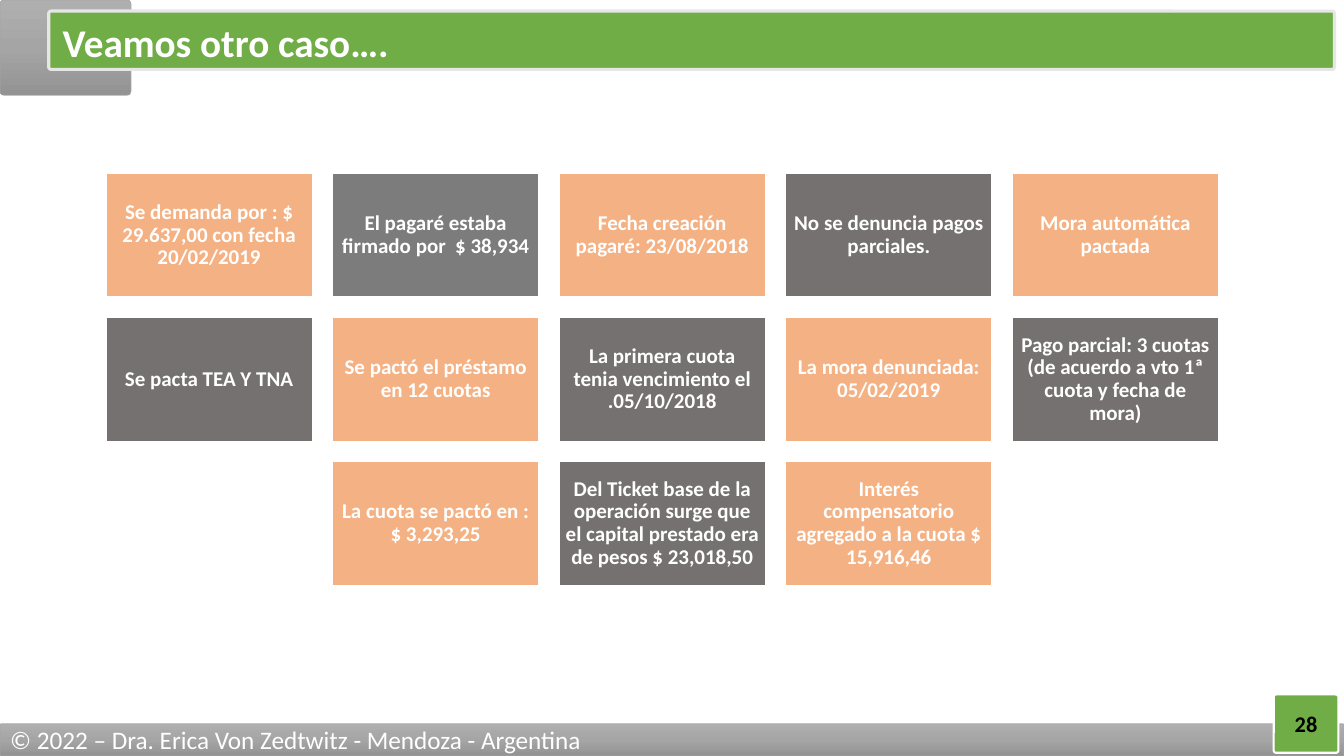
"""Build the slide of facts of a promissory note case, as a grid of tiles."""
from copy import deepcopy

from pptx import Presentation
from pptx.dml.color import RGBColor
from pptx.enum.shapes import MSO_SHAPE as Shape
from pptx.enum.text import MSO_ANCHOR as Anchor, PP_ALIGN as Align
from pptx.util import Cm, Pt

COLORS = {
    "white": "FFFFFF", "black": "000000", "green": "70AD47", "pale": "E7E6E6",
    "silver": "A5A5A5", "silver_top": "AFAFAF", "silver_bottom": "939393",
    "orange": "F4B183", "gray": "767171", "neutral": "7C7C7C",
}
RGB = {name: RGBColor.from_string(code) for name, code in COLORS.items()}


def add_box(kind, left, top, width, height, fill, line, line_width):
    box = slide.shapes.add_shape(kind, Cm(left), Cm(top), Cm(width), Cm(height))
    box.shadow.inherit = False
    if kind == Shape.ROUNDED_RECTANGLE:
        box.adjustments[0] = 0.04
    if fill == "gradient":
        box.fill.gradient()
        box.fill.gradient_angle = 270
        stop_list = box._element.xpath(".//a:gsLst")[0]
        stop_list.insert(1, deepcopy(stop_list[0]))
        shades = ("silver_top", "silver", "silver_bottom")
        for stop, shade, position in zip(box.fill.gradient_stops, shades, (0, 0.5, 1)):
            stop.color.rgb = RGB[shade]
            stop.position = position
    else:
        box.fill.solid()
        box.fill.fore_color.rgb = RGB[fill]
    box.line.color.rgb = RGB[line]
    box.line.width = Pt(line_width)
    return box


def write(box, text, size, color, align, bold=True, spacing=1.0):
    frame = box.text_frame
    frame.word_wrap = True
    frame.vertical_anchor = Anchor.MIDDLE
    paragraph = frame.paragraphs[0]
    paragraph.text = text
    paragraph.alignment = align
    paragraph.line_spacing = spacing
    paragraph.font.name = "Calibri"
    paragraph.font.size = Pt(size)
    paragraph.font.bold = bold
    paragraph.font.color.rgb = RGB[color]


prs = Presentation()
prs.slide_width, prs.slide_height = Cm(33.87), Cm(19.05)
slide = prs.slides.add_slide(prs.slide_layouts[6])

ROUNDED = Shape.ROUNDED_RECTANGLE
add_box(ROUNDED, 0, 0, 3.3, 2.4, "gradient", "silver", 0.5)
add_box(ROUNDED, 1.23, 0.28, 32.4, 1.47, "green", "pale", 2.25)
footer = add_box(ROUNDED, 0, 18.24, 33.87, 0.81, "gradient", "silver", 0.5)
write(footer, "© 2022 – Dra. Erica Von Zedtwitz - Mendoza - Argentina", 18, "white",
      Align.LEFT, bold=False)
page_number = add_box(ROUNDED, 32.1, 17.5, 1.63, 1.47, "green", "white", 1.5)
write(page_number, "28", 16, "black", Align.CENTER)

FACTS = [
    "Se demanda por : $ 29.637,00 con fecha 20/02/2019",
    "El pagaré estaba firmado por  $ 38,934",
    "Fecha creación pagaré: 23/08/2018",
    "No se denuncia pagos parciales.",
    "Mora automática pactada",
    "Se pacta TEA Y TNA",
    "Se pactó el préstamo en 12 cuotas",
    "La primera cuota tenia vencimiento el .05/10/2018",
    "La mora denunciada: 05/02/2019",
    "Pago parcial: 3 cuotas (de acuerdo a vto 1ª cuota y fecha de mora)",
    "La cuota se pactó en : $ 3,293,25",
    "Del Ticket base de la operación surge que el capital prestado era de pesos $ 23,018,50",
    "Interés compensatorio agregado a la cuota $ 15,916,46",
]
COLUMNS = 5
GRID_LEFT, GRID_TOP = 2.67, 4.37
TILE_WIDTH, TILE_HEIGHT, GAP = 5.2, 3.12, 0.51

for index, fact in enumerate(FACTS):
    row, column = divmod(index, COLUMNS)
    tiles_in_row = min(COLUMNS, len(FACTS) - row * COLUMNS)
    column += (COLUMNS - tiles_in_row) / 2
    fill = "neutral" if index == 1 else ("orange", "gray")[index % 2]
    tile = add_box(Shape.RECTANGLE, GRID_LEFT + column * (TILE_WIDTH + GAP),
                   GRID_TOP + row * (TILE_HEIGHT + GAP), TILE_WIDTH, TILE_HEIGHT,
                   fill, "white", 1)
    frame = tile.text_frame
    frame.margin_left = frame.margin_right = Cm(0.16)
    frame.margin_top = frame.margin_bottom = Cm(0.16)
    write(tile, fact, 15, "white", Align.CENTER, spacing=0.9)

title = slide.shapes.add_textbox(Cm(1.33), Cm(0.51), Cm(32.25), Cm(1.24))
write(title, "Veamos otro caso….", 28, "white", Align.LEFT, spacing=0.9)

prs.save("out.pptx")
